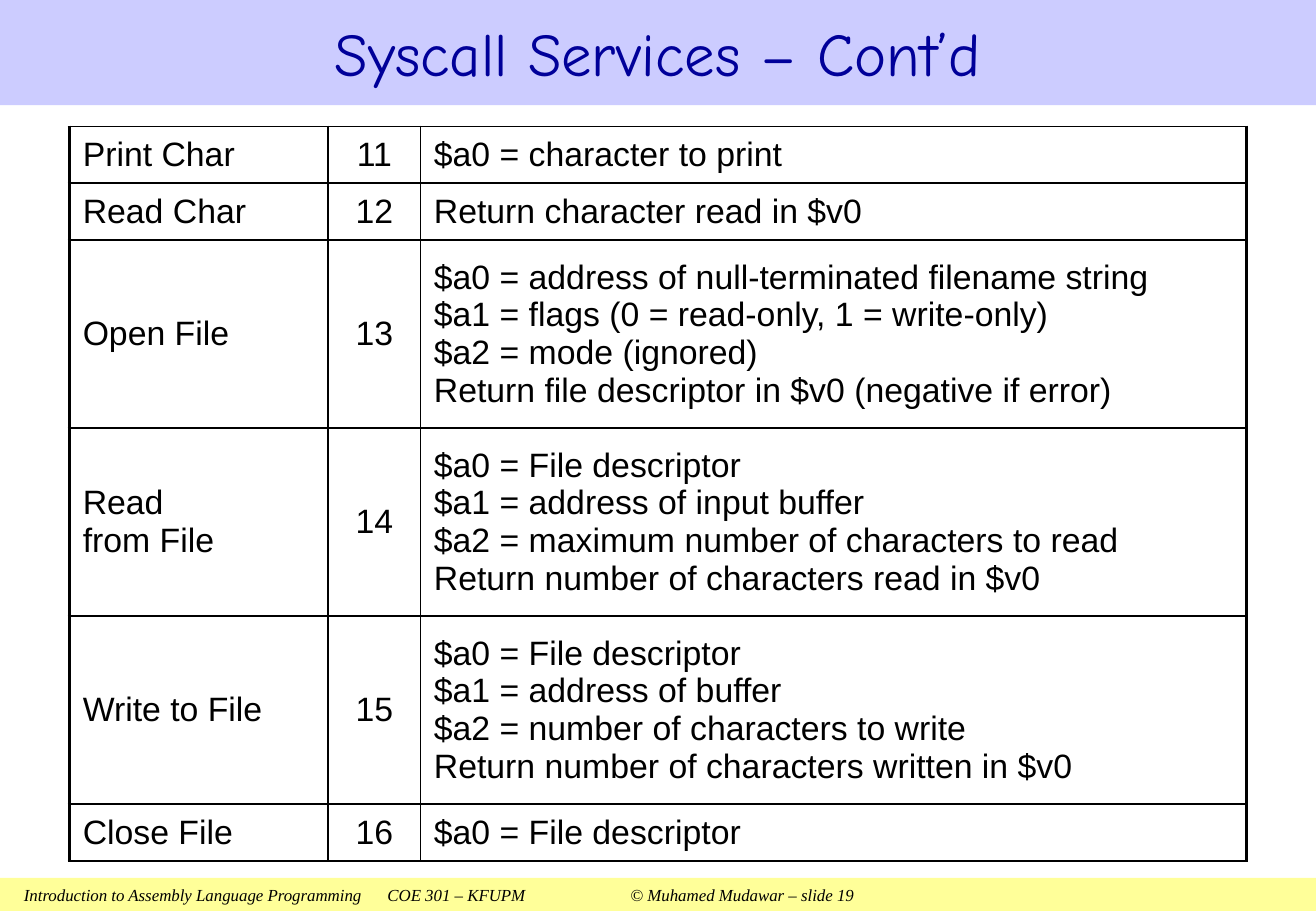
"""Build a slide with a table of file and character syscall services."""
import lxml.etree
import pptx
import pptx.dml.color
import pptx.enum.text
import pptx.oxml.ns
import pptx.util
from pptx.enum.shapes import MSO_SHAPE
from pptx.enum.text import MSO_ANCHOR, PP_ALIGN
from pptx.util import Cm, Pt

BLACK = pptx.dml.color.RGBColor(0x00, 0x00, 0x00)
NAVY = pptx.dml.color.RGBColor(0x00, 0x00, 0x99)
LAVENDER = pptx.dml.color.RGBColor(0xCC, 0xCC, 0xFF)
YELLOW = pptx.dml.color.RGBColor(0xFF, 0xFF, 0x99)

SLIDE_WIDTH, SLIDE_HEIGHT = Cm(27.51), Cm(19.05)
TITLE_HEIGHT = Cm(2.2)
FOOTER_HEIGHT = Cm(0.69)
COLUMN_WIDTHS = [Cm(5.41), Cm(1.93), Cm(17.27)]
SHORT_ROW, TALL_ROW = Cm(1.19), Cm(3.93)
THIN, THICK = Pt(1), Pt(2.25)

FOOTER_PARTS = ["Introduction to Assembly Language Programming",
                "COE 301 – KFUPM", "© Muhamed Mudawar – slide 19"]
FOOTER_TABS = [Cm(7.6), Cm(12.68)]

SERVICES = [
    (["Print Char"], "11", ["$a0 = character to print"]),
    (["Read Char"], "12", ["Return character read in $v0"]),
    (["Open File"], "13", ["$a0 = address of null-terminated filename string",
                           "$a1 = flags (0 = read-only, 1 = write-only)",
                           "$a2 = mode (ignored)",
                           "Return file descriptor in $v0 (negative if error)"]),
    (["Read", "from File"], "14", ["$a0 = File descriptor",
                                   "$a1 = address of input buffer",
                                   "$a2 = maximum number of characters to read",
                                   "Return number of characters read in $v0"]),
    (["Write to File"], "15", ["$a0 = File descriptor",
                               "$a1 = address of buffer",
                               "$a2 = number of characters to write",
                               "Return number of characters written in $v0"]),
    (["Close File"], "16", ["$a0 = File descriptor"]),
]


def write_lines(frame, lines, font_name, size, color, alignment, italic=False):
    """Write each line as a paragraph with one formatted run."""
    for index, line in enumerate(lines):
        paragraph = frame.add_paragraph() if index else frame.paragraphs[0]
        paragraph.alignment = alignment
        run = paragraph.add_run()
        run.text = line
        run.font.name = font_name
        run.font.size = size
        run.font.italic = italic
        run.font.color.rgb = color


def format_band(shape, top, height, color):
    """Make a shape a plain band across the slide."""
    shape.left, shape.top, shape.width, shape.height = 0, top, SLIDE_WIDTH, height
    shape.fill.solid()
    shape.fill.fore_color.rgb = color
    shape.line.fill.background()
    frame = shape.text_frame
    frame.auto_size = pptx.enum.text.MSO_AUTO_SIZE.NONE
    frame.vertical_anchor = MSO_ANCHOR.MIDDLE
    frame.word_wrap = True
    return frame


def add_title(slide):
    """Fill the title placeholder."""
    frame = format_band(slide.shapes.title, 0, TITLE_HEIGHT, LAVENDER)
    write_lines(frame, ["Syscall Services – Cont’d"], "Comic Neue", Pt(36), NAVY,
                PP_ALIGN.CENTER)


def add_footer(slide):
    """Add the footer band with its tabbed text."""
    top = SLIDE_HEIGHT - FOOTER_HEIGHT
    shape = slide.shapes.add_shape(MSO_SHAPE.RECTANGLE, 0, top, SLIDE_WIDTH, FOOTER_HEIGHT)
    shape.shadow.inherit = False
    frame = format_band(shape, top, FOOTER_HEIGHT, YELLOW)
    frame.margin_left = Cm(0.5)
    frame.margin_top = frame.margin_bottom = 0
    write_lines(frame, ["\t".join(FOOTER_PARTS)], "Times New Roman", Pt(10), BLACK,
                PP_ALIGN.LEFT, italic=True)
    properties = frame.paragraphs[0]._p.get_or_add_pPr()
    tabs = lxml.etree.SubElement(properties, pptx.oxml.ns.qn("a:tabLst"))
    for position in FOOTER_TABS:
        lxml.etree.SubElement(tabs, pptx.oxml.ns.qn("a:tab"), pos=str(position), algn="l")


def set_borders(cell, widths):
    """Draw black cell borders, given a width for each side."""
    properties = cell._tc.get_or_add_tcPr()
    for side, width in widths.items():
        line = lxml.etree.SubElement(properties, pptx.oxml.ns.qn(f"a:ln{side}"), w=str(width))
        fill = lxml.etree.SubElement(line, pptx.oxml.ns.qn("a:solidFill"))
        lxml.etree.SubElement(fill, pptx.oxml.ns.qn("a:srgbClr"), val=str(BLACK))


def format_cell(cell, column, lines):
    """Write one cell and draw its borders."""
    last = len(COLUMN_WIDTHS) - 1
    set_borders(cell, {"L": THICK if column == 0 else THIN,
                       "R": THICK if column == last else THIN,
                       "T": THIN, "B": THIN})
    cell.fill.background()
    cell.vertical_anchor = MSO_ANCHOR.MIDDLE
    cell.margin_left = cell.margin_right = Cm(0.28)
    cell.margin_top = cell.margin_bottom = Cm(0.13)
    alignment = PP_ALIGN.CENTER if column == 1 else PP_ALIGN.LEFT
    write_lines(cell.text_frame, lines, "Arial", Pt(20), BLACK, alignment)


def add_service_table(slide):
    """Add the table of services, their codes and their arguments."""
    heights = [TALL_ROW if len(details) > 1 else SHORT_ROW for _, _, details in SERVICES]
    table = slide.shapes.add_table(len(SERVICES), len(COLUMN_WIDTHS), Cm(1.45), Cm(2.64),
                                   sum(COLUMN_WIDTHS), sum(heights)).table
    table.first_row = table.horz_banding = False
    for column, width in zip(table.columns, COLUMN_WIDTHS):
        column.width = width
    for row, height, (name, code, details) in zip(table.rows, heights, SERVICES):
        row.height = height
        for column, lines in enumerate((name, [code], details)):
            format_cell(row.cells[column], column, lines)


def main():
    """Build and save the presentation."""
    presentation = pptx.Presentation()
    presentation.slide_width, presentation.slide_height = SLIDE_WIDTH, SLIDE_HEIGHT
    slide = presentation.slides.add_slide(presentation.slide_layouts[5])
    add_footer(slide)
    add_title(slide)
    add_service_table(slide)
    presentation.save("out.pptx")


if __name__ == "__main__":
    main()
